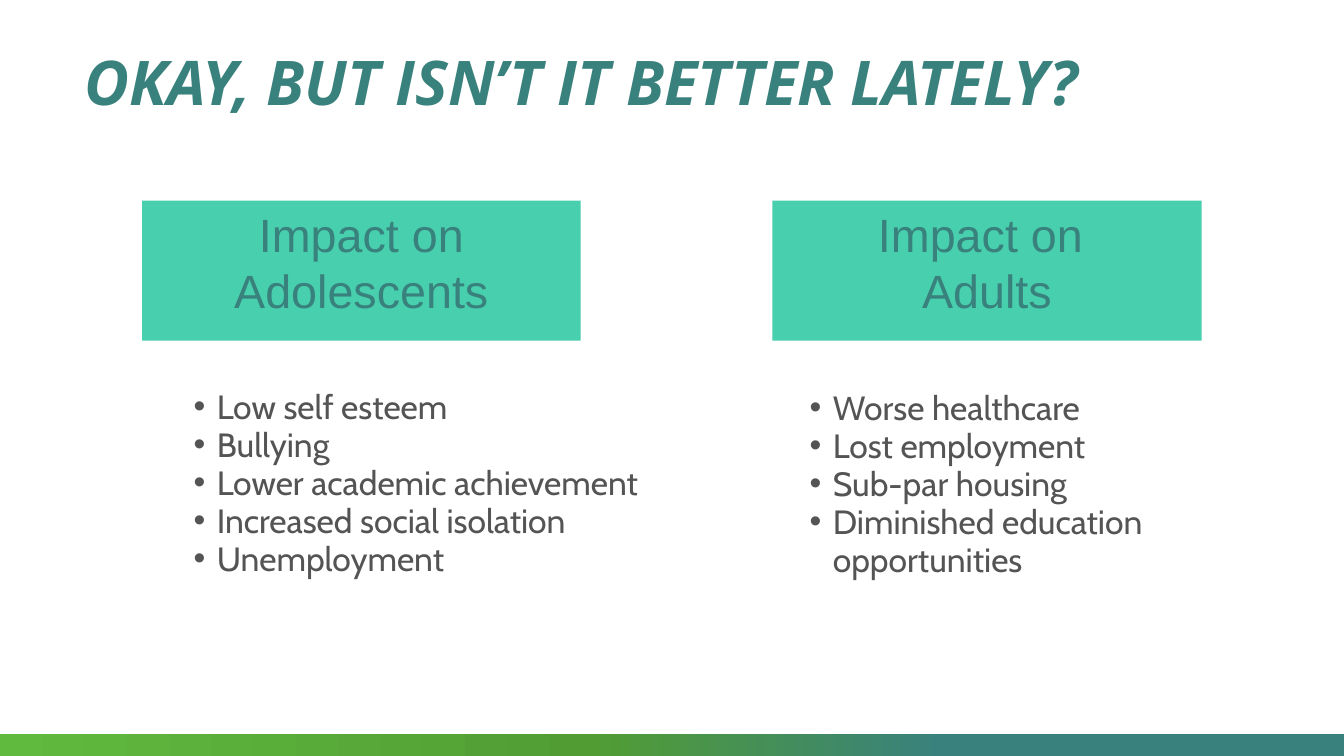
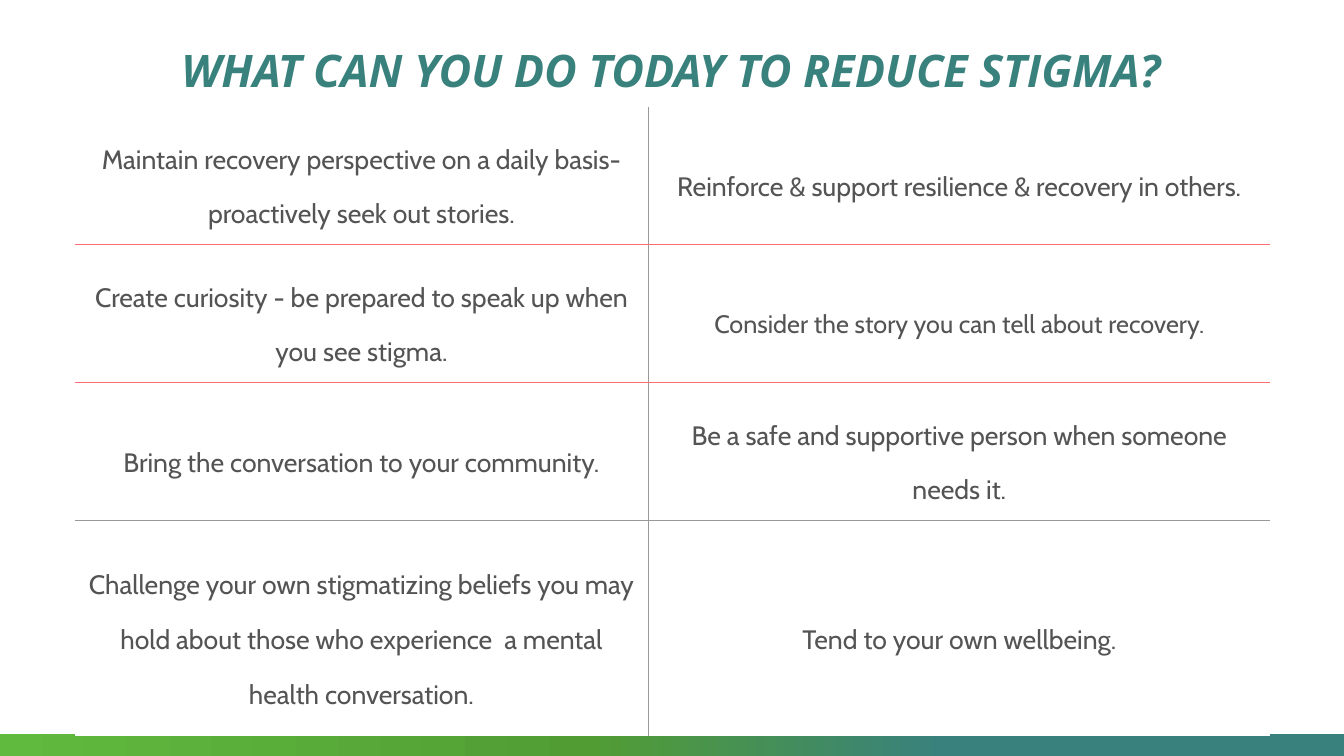
from lxml import etree
from pptx import Presentation
from pptx.dml.color import RGBColor
from pptx.enum.shapes import MSO_SHAPE
from pptx.enum.text import MSO_ANCHOR, MSO_AUTO_SIZE, PP_ALIGN
from pptx.oxml.ns import qn
from pptx.util import Inches, Pt

TEAL = RGBColor(0x39, 0x81, 0x7C)
GREEN = RGBColor(0x51, 0x9D, 0x34)
LIME = RGBColor(0x60, 0xBA, 0x3E)
MINT = RGBColor(0x48, 0xCF, 0xAE)
CORAL = RGBColor(0xFE, 0x6D, 0x73)
GRAY = RGBColor(0x99, 0x99, 0x99)
INK = RGBColor(0x54, 0x54, 0x54)
WHITE = RGBColor(0xFF, 0xFF, 0xFF)
HEADING_FONT, BOX_FONT, BODY_FONT = "Open Sans", "Arial", "Cabin"
LEFT, CENTER = PP_ALIGN.LEFT, PP_ALIGN.CENTER
TOP, MIDDLE = MSO_ANCHOR.TOP, MSO_ANCHOR.MIDDLE
NO_AUTOFIT = MSO_AUTO_SIZE.NONE
RECTANGLE = MSO_SHAPE.RECTANGLE
TWO_CONTENT, TITLE_ONLY = 3, 5

IMPACTS = [
    ((1.41, 4.35), ["Impact on Adolescents"], (1.69, 3.85, 4.66, 2.63),
     ["Low self esteem", "Bullying", "Lower academic achievement",
      "Increased social isolation", "Unemployment"]),
    ((7.66, 4.26), ["Impact on ", "Adults"], (7.8, 3.86, 4.26, 2.25),
     ["Worse healthcare", "Lost employment", "Sub-par housing",
      "Diminished education opportunities"]),
]
ACTIONS = [
    ("Maintain recovery perspective on a daily basis- proactively seek out stories.",
     "Reinforce & support resilience & recovery in others."),
    ("Create curiosity - be prepared to speak up when you see stigma.",
     "Consider the story you can tell about recovery."),
    ("Bring the conversation to your community.",
     "Be a safe and supportive person when someone needs it."),
    ("Challenge your own stigmatizing beliefs you may hold about those who "
     "experience  a mental health conversation.",
     "Tend to your own wellbeing."),
]
SMALLER_ACTION = (1, 1)
COLUMN_WIDTHS = [5.69, 6.17]
ROW_HEIGHTS = [1.27, 1.19, 1.19, 2.14]
ROW_RULES = [CORAL, CORAL, GRAY]


class Deck:
    """Holds the presentation, its shared style and the current slide."""

    def __init__(self):
        self.prs = Presentation()
        self.prs.slide_width, self.prs.slide_height = Inches(13.33), Inches(7.5)
        self.slide = None

    def add_slide(self, layout):
        self.slide = self.prs.slides.add_slide(self.prs.slide_layouts[layout])

    def place(self, shape, box):
        shape.left, shape.top, shape.width, shape.height = map(Inches, box)

    def add_lines(self, frame, lines, size, font, color, align, spacing, **style):
        for index, line in enumerate(lines):
            paragraph = frame.add_paragraph() if index else frame.paragraphs[0]
            paragraph.alignment = align
            paragraph.line_spacing = spacing
            paragraph.space_before = Pt(0)
            run = paragraph.add_run()
            run.text = line
            run.font.size, run.font.name = Pt(size), font
            run.font.color.rgb = color
            for name, value in style.items():
                setattr(run.font, name, value)

    def rectangle(self, box):
        shape = self.slide.shapes.add_shape(RECTANGLE, *map(Inches, box))
        shape.shadow.inherit = False
        shape.line.fill.background()
        return shape

    def master_band(self):
        band = self.rectangle((0, 7.28, 13.33, 0.22))
        band.fill.gradient()
        band.fill.gradient_angle = 0
        stops = band.element.spPr.find(qn("a:gradFill")).find(qn("a:gsLst"))
        for stop in list(stops):
            stops.remove(stop)
        for position, color in ((0, LIME), (44, GREEN), (70, TEAL)):
            stop = etree.SubElement(stops, qn("a:gs"), pos=str(position * 1000))
            etree.SubElement(stop, qn("a:srgbClr"), val=str(color))
        self.prs.slide_master.shapes.element.append(band.element)

    def title(self, text, box, size, align):
        title = self.slide.shapes.title
        self.place(title, box)
        frame = title.text_frame
        frame.auto_size, frame.vertical_anchor = NO_AUTOFIT, MIDDLE
        self.add_lines(frame, [text], size, HEADING_FONT, TEAL, align, 0.9,
                       bold=True, italic=True)

    def heading_box(self, lines, left, width):
        box = self.rectangle((left, 1.99, width, 1.39))
        box.fill.solid()
        box.fill.fore_color.rgb = MINT
        frame = box.text_frame
        frame.word_wrap, frame.vertical_anchor = True, TOP
        self.add_lines(frame, lines, 33.3, BOX_FONT, TEAL, CENTER, Pt(40))

    def bullets(self, holder, items, box):
        self.place(holder, box)
        frame = holder.text_frame
        frame.auto_size, frame.vertical_anchor = NO_AUTOFIT, TOP
        frame.margin_left = frame.margin_right = 0
        frame.margin_top = frame.margin_bottom = 0
        self.add_lines(frame, items, 24, BODY_FONT, INK, LEFT, Pt(27.1))
        for paragraph in frame.paragraphs:
            properties = paragraph._p.get_or_add_pPr()
            properties.set("marL", str(Inches(0.46)))
            properties.set("indent", str(Inches(-0.23)))
            etree.SubElement(properties, qn("a:buFont"), typeface="Arial")
            etree.SubElement(properties, qn("a:buChar"), char="•")

    def borders(self, cell, colors):
        properties = cell._tc.get_or_add_tcPr()
        for index, (side, color) in enumerate(zip("LRTB", colors)):
            line = etree.Element(qn(f"a:ln{side}"), w=str(Pt(0.75) if color else 0))
            if color:
                fill = etree.SubElement(line, qn("a:solidFill"))
                etree.SubElement(fill, qn("a:srgbClr"), val=str(color))
            else:
                etree.SubElement(line, qn("a:noFill"))
            properties.insert(index, line)

    def action_table(self, left, top, height):
        holder = self.slide.shapes.add_table(
            len(ACTIONS), len(COLUMN_WIDTHS), Inches(left), Inches(top),
            Inches(sum(COLUMN_WIDTHS)), Inches(height))
        table = holder.table
        table.first_row = table.horz_banding = False
        for column, width in zip(table.columns, COLUMN_WIDTHS):
            column.width = Inches(width)
        for row, row_height in zip(table.rows, ROW_HEIGHTS):
            row.height = Inches(row_height)
        holder.height = Inches(height)
        rules = [None, *ROW_RULES, None]
        dividers = [None, GRAY, None]
        for r, actions in enumerate(ACTIONS):
            for c, action in enumerate(actions):
                cell = table.cell(r, c)
                cell.fill.solid()
                cell.fill.fore_color.rgb = WHITE
                cell.vertical_anchor = MIDDLE
                cell.margin_left = cell.margin_right = Inches(0.14)
                cell.margin_top = cell.margin_bottom = Inches(0.14)
                size, spacing = (18, 37.8) if (r, c) == SMALLER_ACTION else (19, 39.2)
                self.add_lines(cell.text_frame, [action], size, BODY_FONT, INK,
                               CENTER, Pt(spacing))
                self.borders(cell, dividers[c:c + 2] + rules[r:r + 2])


def main():
    deck = Deck()
    deck.add_slide(TWO_CONTENT)
    deck.master_band()
    deck.title("OKAY, BUT ISN’T IT BETTER LATELY?", (0.74, 0.12, 12.07, 1.45), 44, LEFT)
    bodies = list(deck.slide.placeholders)[1:]
    for body, (span, heading, box, items) in zip(bodies, IMPACTS):
        deck.heading_box(heading, *span)
        deck.bullets(body, items, box)

    deck.add_slide(TITLE_ONLY)
    deck.title("WHAT CAN YOU DO TODAY TO REDUCE STIGMA?", (-0.77, 0, 14.86, 1.45), 32, CENTER)
    deck.action_table(0.74, 1.06, 6.22)
    deck.prs.save("out.pptx")


if __name__ == "__main__":
    main()
